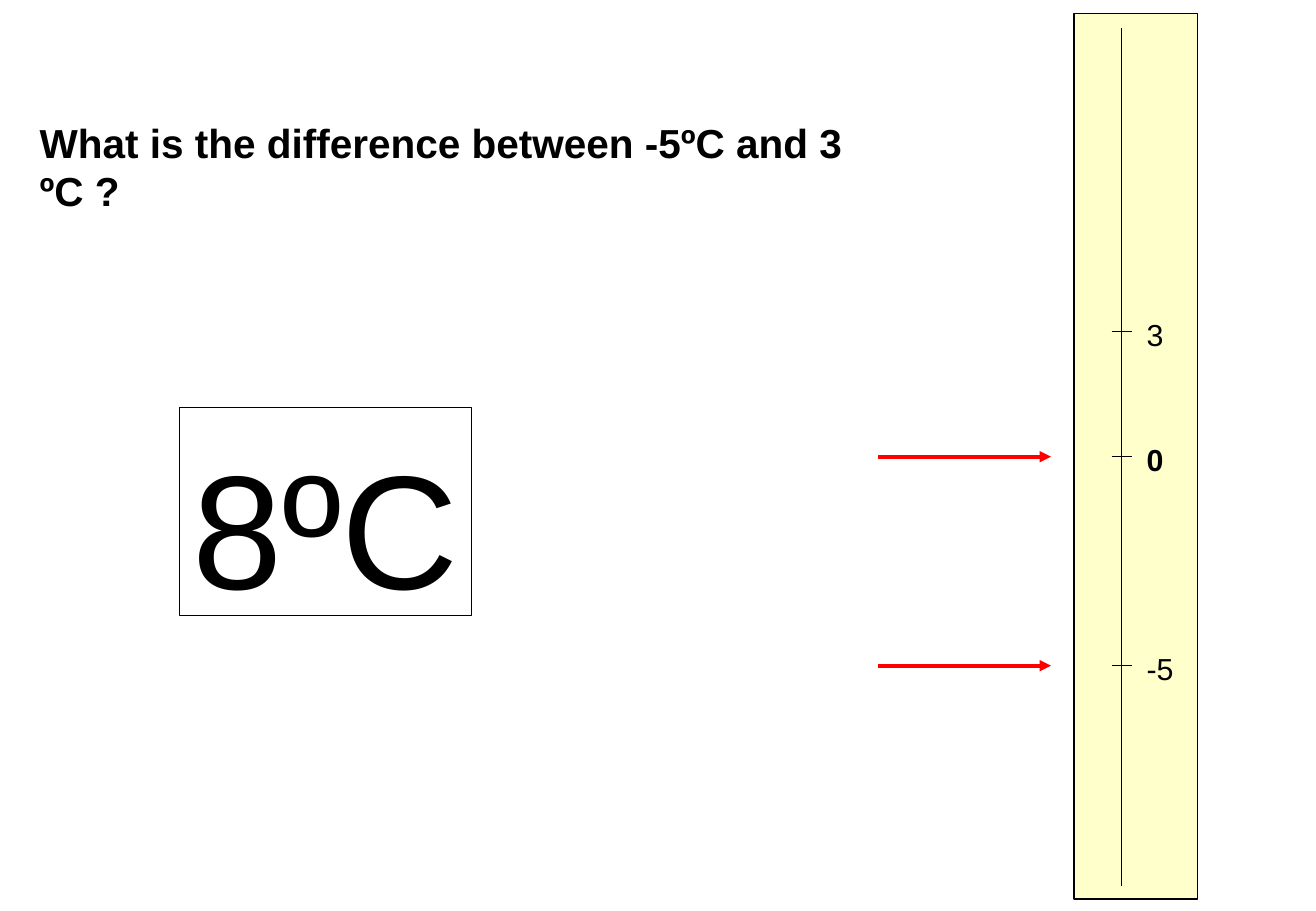
from lxml import etree
from pptx import Presentation
from pptx.dml.color import RGBColor
from pptx.enum.shapes import MSO_CONNECTOR, MSO_SHAPE
from pptx.enum.text import MSO_ANCHOR, MSO_AUTO_SIZE, PP_ALIGN
from pptx.oxml.ns import qn
from pptx.util import Cm, Pt

STRAIGHT = MSO_CONNECTOR.STRAIGHT
RECTANGLE = MSO_SHAPE.RECTANGLE
TOP = MSO_ANCHOR.TOP
NO_AUTOSIZE = MSO_AUTO_SIZE.NONE
LEFT, CENTER = PP_ALIGN.LEFT, PP_ALIGN.CENTER

COLORS = {"ink": "000000", "scale": "FFFFCC", "arrow": "FF0000"}
FONT = "Arial"
TITLE_ONLY = 5
ZERO_Y = 9.55
DEGREE = 0.874
SCALE_X = 23.44


def color(name):
    return RGBColor.from_string(COLORS[name])


def height_of(degrees):
    return ZERO_Y - degrees * DEGREE


def write(shape, text, size, bold=False, align=LEFT):
    frame = shape.text_frame
    frame.word_wrap = False
    frame.auto_size = NO_AUTOSIZE
    frame.vertical_anchor = TOP
    frame.margin_left = frame.margin_right = Cm(0.25)
    frame.margin_top = Cm(0.13 + size * 0.003)
    frame.margin_bottom = Cm(0)
    paragraph = frame.paragraphs[0]
    paragraph.alignment = align
    run = paragraph.add_run()
    run.text = text
    run.font.name = FONT
    run.font.size = Pt(size)
    run.font.bold = bold
    run.font.color.rgb = color("ink")


def add_question(slide, text):
    question = slide.shapes.title
    question.left, question.top = Cm(0.58), Cm(2.26)
    question.width, question.height = Cm(19.18), Cm(1.27)
    write(question, text, 24, bold=True)


def add_box(slide, left, top, width, height, fill=None):
    box = slide.shapes.add_shape(RECTANGLE, Cm(left), Cm(top), Cm(width), Cm(height))
    box.shadow.inherit = False
    if fill:
        box.fill.solid()
        box.fill.fore_color.rgb = color(fill)
    else:
        box.fill.background()
    box.line.color.rgb = color("ink")
    box.line.width = Pt(0.75)
    return box


def add_line(slide, x1, y1, x2, y2, ink="ink", weight=0.75):
    line = slide.shapes.add_connector(STRAIGHT, Cm(x1), Cm(y1), Cm(x2), Cm(y2))
    line.line.color.rgb = color(ink)
    line.line.width = Pt(weight)
    etree.SubElement(line._element.spPr, qn("a:effectLst"))
    return line


def add_mark(slide, degrees, label_width):
    y = height_of(degrees)
    add_line(slide, 23.24, y, 23.67, y)
    label = slide.shapes.add_textbox(Cm(23.72), Cm(y - 0.51), Cm(label_width), Cm(1.02))
    write(label, str(degrees), 18, bold=degrees == 0)


def add_arrow(slide, degrees):
    y = height_of(degrees)
    arrow = add_line(slide, 18.36, y, 21.97, y, "arrow", 2.25)
    etree.SubElement(arrow.line._get_or_add_ln(), qn("a:tailEnd"), type="triangle")


def main():
    deck = Presentation()
    deck.slide_width, deck.slide_height = Cm(27.51), Cm(19.05)
    slide = deck.slides.add_slide(deck.slide_layouts[TITLE_ONLY])

    add_question(slide, "What is the difference between -5ºC and 3 ºC ?")

    add_box(slide, 22.45, 0.28, 2.59, 18.52, "scale")
    add_line(slide, SCALE_X, 0.58, SCALE_X, 18.52)
    for degrees, label_width in ((3, 0.86), (0, 0.86), (-5, 1.07)):
        add_mark(slide, degrees, label_width)
    for degrees in (-5, 0):
        add_arrow(slide, degrees)

    answer = add_box(slide, 3.76, 8.53, 6.1, 4.34)
    write(answer, "8ºC", 96, align=CENTER)

    deck.save("out.pptx")


if __name__ == "__main__":
    main()
